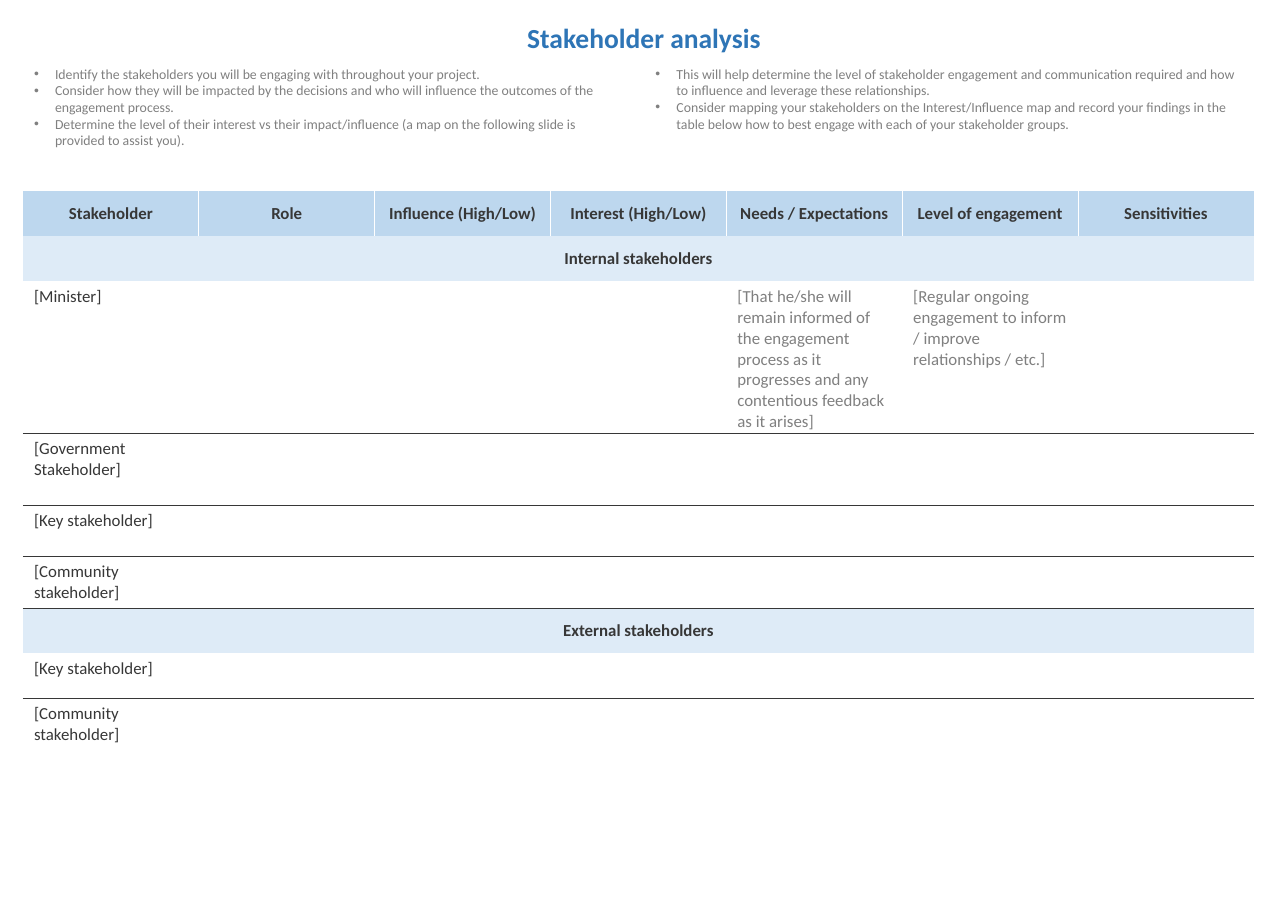
from lxml import etree
from pptx import Presentation
from pptx import util as u
from pptx.dml.color import RGBColor
from pptx.enum import text
from pptx.oxml.ns import qn

EMU_PER_PX = 8298
FONT = "Calibri"
NO_STYLE = "{2D5ABB26-0587-4C30-8999-92F81FD0307C}"
TITLE_BLUE = RGBColor(0x2E, 0x75, 0xB6)
HEADER_BLUE = RGBColor(0xBD, 0xD7, 0xEE)
BAND_BLUE = RGBColor(0xDE, 0xEB, 0xF7)
DARK = RGBColor(0x37, 0x37, 0x37)
GREY = RGBColor(0x80, 0x80, 0x80)
WHITE = RGBColor(0xFF, 0xFF, 0xFF)

GUIDANCE = [
    "Identify the stakeholders you will be engaging with throughout your project.",
    "Consider how they will be impacted by the decisions and who will influence "
    "the outcomes of the engagement process.",
    "Determine the level of their interest vs their impact/influence (a map on "
    "the following slide is provided to assist you).",
    "This will help determine the level of stakeholder engagement and communication "
    "required and how to influence and leverage these relationships.",
    "Consider mapping your stakeholders on the Interest/Influence map and record your "
    "findings in the table below how to best engage with each of your stakeholder groups.",
]
HEADERS = ["Stakeholder", "Role", "Influence (High/Low)", "Interest (High/Low)",
           "Needs / Expectations", "Level of engagement", "Sensitivities"]
NEEDS = ("[That he/she will remain informed of the engagement process as it "
         "progresses and any contentious feedback as it arises]")
ENGAGEMENT = "[Regular ongoing engagement to inform / improve relationships / etc.]"
GROUPS = [
    ("Internal stakeholders", [
        (152, {0: "[Minister]", 4: NEEDS, 5: ENGAGEMENT}),
        (72, {0: "[Government Stakeholder]"}),
        (51, {0: "[Key stakeholder]"}),
        (52, {0: "[Community stakeholder]"}),
    ]),
    ("External stakeholders", [
        (45, {0: "[Key stakeholder]"}),
        (51, {0: "[Community stakeholder]"}),
    ]),
]
HEADING_HEIGHT = 45


def px(length):
    return u.Emu(length * EMU_PER_PX)


class SlideBuilder:
    def __init__(self, slide):
        self.slide = slide

    def place(self, shape, left, top, width, height):
        shape.left, shape.top = px(left), px(top)
        shape.width, shape.height = px(width), px(height)
        frame = shape.text_frame
        frame.word_wrap = True
        frame.auto_size = text.MSO_AUTO_SIZE.NONE
        frame.vertical_anchor = text.MSO_ANCHOR.TOP
        return frame

    def run(self, paragraph, words, size, color, bold=False):
        run = paragraph.add_run()
        run.text = words
        font = run.font
        font.name, font.size, font.bold = FONT, u.Pt(size), bold
        font.color.rgb = color

    def title(self, words, *box):
        frame = self.place(self.slide.shapes.title, *box)
        paragraph = frame.paragraphs[0]
        paragraph.alignment = text.PP_ALIGN.CENTER
        paragraph.line_spacing = 1.07
        self.run(paragraph, words, 18, TITLE_BLUE, True)

    def bullets(self, items, *box):
        frame = self.place(self.slide.placeholders[1], *box)
        frame.margin_bottom = 0
        body = frame._txBody.bodyPr
        body.set("numCol", "2")
        body.set("spcCol", str(px(34)))
        for index, item in enumerate(items):
            paragraph = frame.add_paragraph() if index else frame.paragraphs[0]
            paragraph.space_before = u.Pt(0)
            properties = paragraph._p.get_or_add_pPr()
            properties.set("marL", str(px(21)))
            properties.set("indent", str(px(-21)))
            etree.SubElement(properties, qn("a:buChar"), char="•")
            self.run(paragraph, item, 9, GREY)

    def border(self, cell, side, color):
        line = etree.SubElement(cell._tc.get_or_add_tcPr(), qn("a:ln" + side), w=str(u.Pt(0.5)))
        fill = etree.SubElement(line, qn("a:solidFill"))
        etree.SubElement(fill, qn("a:srgbClr"), val=str(color))

    def heading(self, cell, words, fill):
        cell.fill.solid()
        cell.fill.fore_color.rgb = fill
        cell.vertical_anchor = text.MSO_ANCHOR.MIDDLE
        paragraph = cell.text_frame.paragraphs[0]
        paragraph.alignment = text.PP_ALIGN.CENTER
        self.run(paragraph, words, 11, DARK, True)

    def entries(self, cells, entries, first, last):
        for column, cell in enumerate(cells):
            if not first:
                self.border(cell, "T", DARK)
            if not last:
                self.border(cell, "B", DARK)
            cell.fill.background()
            cell.margin_bottom = 0
            if column in entries:
                color = GREY if column else DARK
                self.run(cell.text_frame.paragraphs[0], entries[column], 11, color)

    def table(self, headers, groups, left, top, width):
        heights = [HEADING_HEIGHT]
        for _, members in groups:
            heights += [HEADING_HEIGHT] + [height for height, _ in members]
        frame = self.slide.shapes.add_table(len(heights), len(headers), px(left), px(top),
                                            px(width), px(sum(heights)))
        table = frame.table
        table._tbl.tblPr.find(qn("a:tableStyleId")).text = NO_STYLE
        table.horz_banding = False
        for row, height in zip(table.rows, heights):
            row.height = px(height)
        for column in table.columns:
            column.width = px(width) // len(headers)

        rows = iter(table.rows)
        for column, (cell, words) in enumerate(zip(next(rows).cells, headers)):
            if column:
                self.border(cell, "L", WHITE)
            if column < len(headers) - 1:
                self.border(cell, "R", WHITE)
            self.heading(cell, words, HEADER_BLUE)
        for name, members in groups:
            band = list(next(rows).cells)
            band[0].merge(band[-1])
            self.heading(band[0], name, BAND_BLUE)
            for index, (_, entries) in enumerate(members):
                self.entries(next(rows).cells, entries, index == 0, index == len(members) - 1)


def main():
    presentation = Presentation()
    presentation.slide_width, presentation.slide_height = px(1288), px(911)
    builder = SlideBuilder(presentation.slides.add_slide(presentation.slide_layouts[1]))
    builder.bullets(GUIDANCE, 23, 60, 1231, 91)
    builder.title("Stakeholder analysis", 0, 13, 1288, 47)
    builder.table(HEADERS, GROUPS, 23, 191, 1231)
    presentation.save("out.pptx")


if __name__ == "__main__":
    main()
